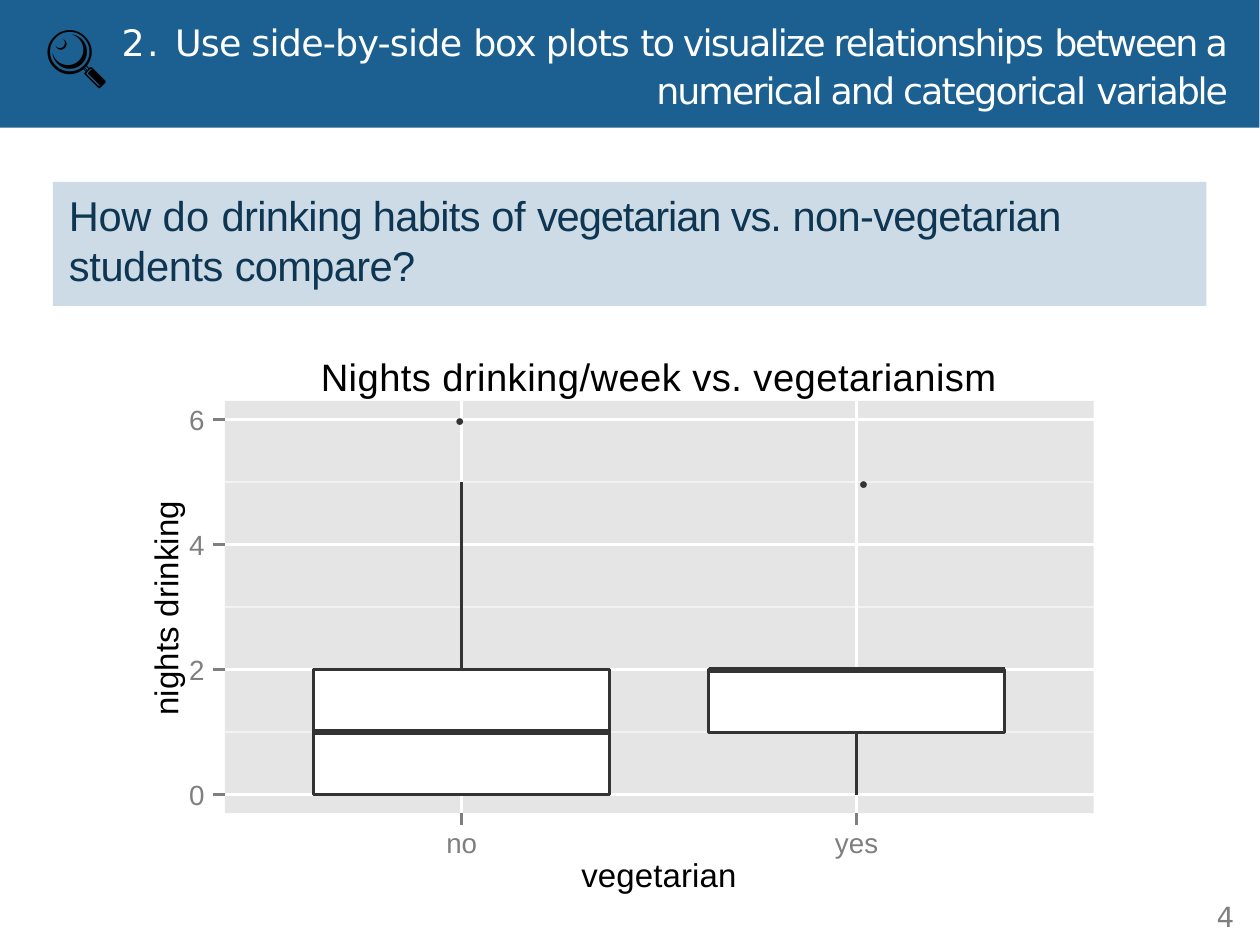
from collections import namedtuple

from lxml import etree
from pptx import Presentation
from pptx.dml.color import RGBColor
from pptx.enum.shapes import MSO_CONNECTOR, MSO_SHAPE
from pptx.enum.text import MSO_ANCHOR, PP_ALIGN
from pptx.util import Inches, Pt
from pptx.oxml.ns import qn

RECTANGLE = MSO_SHAPE.RECTANGLE
STRAIGHT = MSO_CONNECTOR.STRAIGHT
LEFT, CENTER, RIGHT = PP_ALIGN.LEFT, PP_ALIGN.CENTER, PP_ALIGN.RIGHT
TOP, MIDDLE = MSO_ANCHOR.TOP, MSO_ANCHOR.MIDDLE

SLIDE_WIDTH, SLIDE_HEIGHT = Pt(363), Pt(272.5)
CELL = Inches(0.04)
COLUMNS, ROWS = 126, 94.5
COLORS = {
    "header": "1B6090", "white": "FFFFFF", "question": "CCDBE6", "navy": "0E3652",
    "panel": "E5E5E5", "minor": "F2F2F2", "ink": "333333", "grey": "7F7F7F",
    "black": "000000",
}
THIN, NORMAL, HEAVY = 0.43, 0.86, 1.7

Box = namedtuple("Box", "left top width height")
Group = namedtuple("Group", "name low lower_quartile median upper_quartile high outlier shift")

HEADING = [
    [("2. ", 0.7), ("Use side-by-side ", -0.2), ("box plots ", -0.3),
     ("to visualize relationships ", -0.5), ("between a", -0.6)],
    [("numerical ", -0.5), ("and categorical ", -0.5), ("variable", -0.6)],
]
QUESTION = [
    [("How ", -0.1), ("do ", 0.1), ("drinking habits ", -0.2), ("of ", -0.1),
     ("vegetarian vs. ", -0.3), ("non-vegetarian ", -0.2), ("students ", -0.1),
     ("compare?", -0.2)],
]
GROUPS = [
    Group("no", 0, 0, 1, 2, 5, 6, -0.2),
    Group("yes", 0, 1, 2, 2, 2, 5, 0.7),
]


def cells(*lengths):
    return [round(length * CELL) for length in lengths]


def color(name):
    return RGBColor.from_string(COLORS[name])


def add_block(slide, box, fill, line=None):
    block = slide.shapes.add_shape(RECTANGLE, *cells(*box))
    block.shadow.inherit = False
    block.fill.solid()
    block.fill.fore_color.rgb = color(fill)
    if line:
        block.line.color.rgb = color(line)
        block.line.width = Pt(NORMAL)
    else:
        block.line.fill.background()
    return block


def add_line(slide, start, end, stroke, width=NORMAL):
    line = slide.shapes.add_connector(STRAIGHT, *cells(*start, *end))
    line.line.color.rgb = color(stroke)
    line.line.width = Pt(width)
    etree.SubElement(line._element.spPr, qn("a:effectLst"))


def write(shape, lines, size, font, ink, align=LEFT, anchor=TOP, pitch=None, insets=(0, 0)):
    frame = shape.text_frame
    frame.word_wrap = True
    frame.vertical_anchor = anchor
    frame.margin_left, frame.margin_top = cells(*insets)
    frame.margin_right = frame.margin_bottom = 0
    for index, pieces in enumerate(lines):
        para = frame.add_paragraph() if index else frame.paragraphs[0]
        para.alignment = align
        if pitch:
            para.line_spacing = Pt(pitch)
        for words, tracking in pieces:
            span = para.add_run()
            span.text = words
            span.font.size = Pt(size)
            span.font.name = font
            span.font.color.rgb = color(ink)
            span.font._element.set("spc", str(round(tracking * 100)))


def add_label(slide, words, center, width, size, ink, font="Arial", tracking=0, rotation=0):
    x, y = center
    height = 5
    label = slide.shapes.add_textbox(*cells(x - width / 2, y - height / 2, width, height))
    label.rotation = rotation
    write(label, [[(words, tracking)]], size, font, ink, CENTER, MIDDLE)


def add_header(slide, box):
    add_block(slide, box, "header")
    heading = slide.shapes.add_textbox(
        *cells(box.left + 7.5, box.top + 1.6, box.width - 10.65, box.height - 2.75))
    write(heading, HEADING, 10.5, "DejaVu Sans", "white", RIGHT, pitch=13.8)
    icon = slide.shapes.add_textbox(*cells(box.left + 2.1, box.top + 0.25, 11.25, 10))
    write(icon, [[("🔍", 0)]], 18, "Calibri", "black", insets=(2.5, 1.25))


def add_question(slide, box):
    panel = add_block(slide, box, "question")
    write(panel, QUESTION, 12, "Arial", "navy", pitch=14.4, insets=(1.6, 0.8))


def add_box_plot(slide, box):
    right, bottom = box.left + box.width, box.top + box.height
    middle = box.left + box.width / 2
    tick = 1.2
    unit = box.height / 6.6
    category = box.width / 2.2

    def value_y(value):
        return bottom - (value + 0.3) * unit

    def category_x(index):
        return box.left + (index + 0.6) * category

    add_block(slide, box, "panel")
    for value in (1, 3, 5):
        add_line(slide, (box.left, value_y(value)), (right, value_y(value)), "minor", THIN)
    for value in (0, 2, 4, 6):
        y = value_y(value)
        add_line(slide, (box.left, y), (right, y), "white")
        add_line(slide, (box.left - tick, y), (box.left, y), "grey")
        add_label(slide, str(value), (box.left - 2.8, y), 4, 8, "grey")

    for index, group in enumerate(GROUPS):
        x = category_x(index)
        add_line(slide, (x, box.top), (x, bottom), "white")
        add_line(slide, (x, bottom), (x, bottom + tick), "grey")
        add_label(slide, group.name, (x, bottom + 2.95), 10, 8, "grey")
        add_box_and_whiskers(slide, group, x, 0.75 * category, value_y)

    add_label(slide, "Nights drinking/week vs. vegetarianism", (middle, box.top - 2.5),
              80, 11, "black", tracking=0.1)
    add_label(slide, "vegetarian", (middle, bottom + 6.1), 24, 9.5, "black", tracking=0.05)
    add_label(slide, "nights drinking", (box.left - 5.95, box.top + box.height / 2 + 0.1),
              24, 9.5, "black", tracking=0.05, rotation=270)


def add_box_and_whiskers(slide, group, x, width, value_y):
    left, right = x - width / 2, x + width / 2
    upper, lower = value_y(group.upper_quartile), value_y(group.lower_quartile)
    for quartile, extreme in ((group.upper_quartile, group.high),
                              (group.lower_quartile, group.low)):
        if quartile != extreme:
            add_line(slide, (x, value_y(quartile)), (x, value_y(extreme)), "ink")
    add_block(slide, Box(left, upper, width, lower - upper), "white", "ink")
    median = value_y(group.median)
    add_line(slide, (left, median), (right, median), "ink", HEAVY)
    add_label(slide, "●", (x + group.shift, value_y(group.outlier) + 0.1), 3, 4.5, "ink")


def main():
    deck = Presentation()
    deck.slide_width, deck.slide_height = SLIDE_WIDTH, SLIDE_HEIGHT
    page = deck.slides.add_slide(deck.slide_layouts[6])
    add_header(page, Box(0, 0, COLUMNS, 12.8))
    add_question(page, Box(5.3, 18.2, 115.4, 12.4))
    add_box_plot(page, Box(22.5, 40.1, 86.9, 41.25))
    add_label(page, "4", (COLUMNS - 3.4, ROWS - 2.85), 5, 8, "grey", "DejaVu Sans")
    deck.save("out.pptx")


if __name__ == "__main__":
    main()
